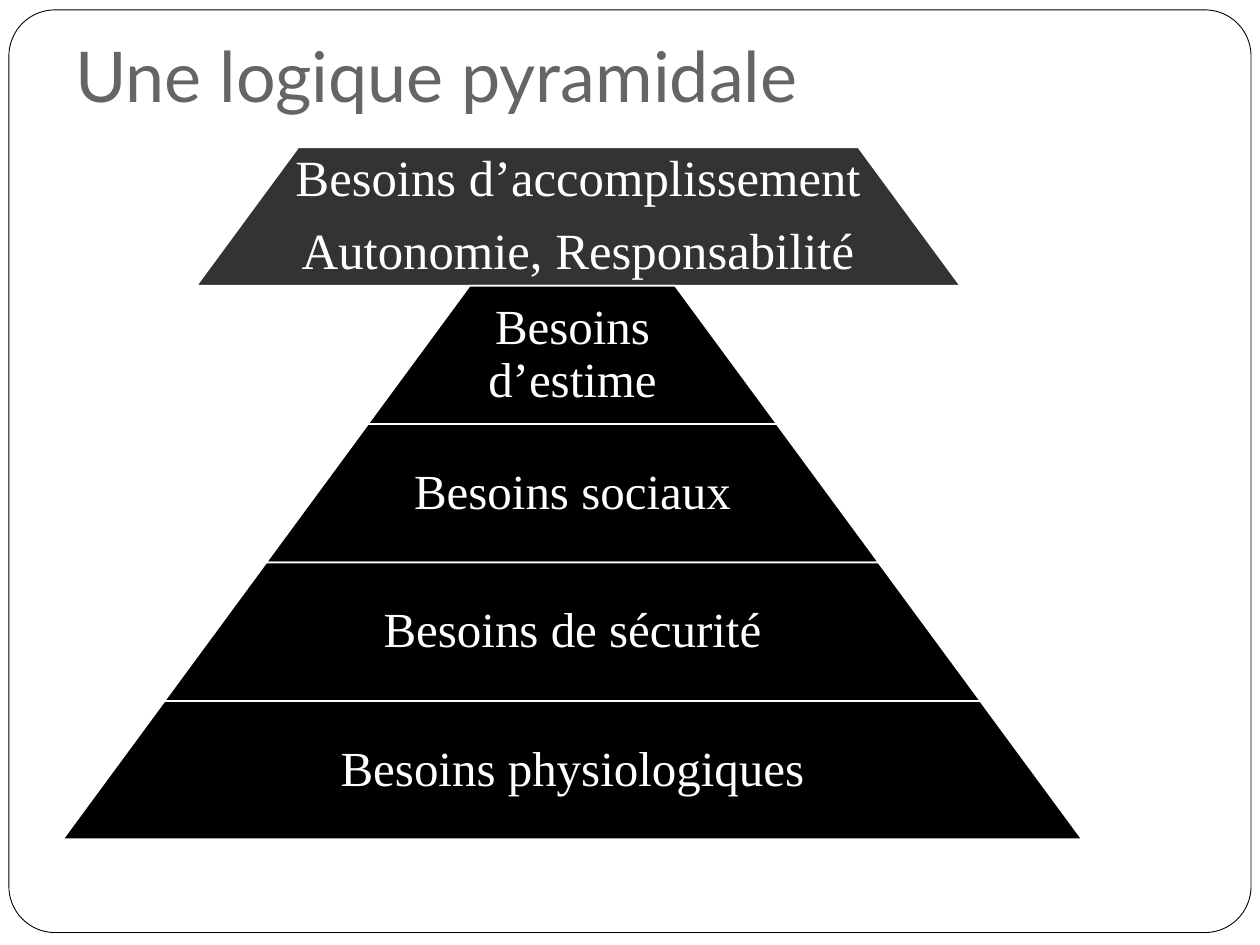
from pptx import Presentation
from pptx.dml.color import RGBColor
from pptx.enum.shapes import MSO_SHAPE as Preset
from pptx.enum.text import MSO_ANCHOR as Anchor, PP_ALIGN as Align
from pptx.util import Cm, Pt


def paint(shape, fill, line, width):
    shape.shadow.inherit = False
    shape.fill.solid()
    shape.fill.fore_color.rgb = RGBColor.from_string(fill)
    shape.line.color.rgb = RGBColor.from_string(line)
    shape.line.width = Pt(width)


def write(para, text, font, size, color):
    span = para.add_run()
    span.text = text
    span.font.name = font
    span.font.size = Pt(size)
    span.font.color.rgb = RGBColor.from_string(color)


deck = Presentation()
deck.slide_width, deck.slide_height = Cm(25.4), Cm(19.05)
page = deck.slides.add_slide(deck.slide_layouts[6])

frame = page.shapes.add_shape(Preset.ROUNDED_RECTANGLE, Cm(0.18), Cm(0.2), Cm(25.04), Cm(18.6))
frame.adjustments[0] = 0.05
paint(frame, "FFFFFF", "000000", 0.5)

title = page.shapes.add_textbox(Cm(1.27), Cm(0.43), Cm(22.86), Cm(2.16)).text_frame
title.word_wrap = True
title.vertical_anchor = Anchor.BOTTOM
title.margin_bottom = Cm(0.25)
write(title.paragraphs[0], "Une logique pyramidale", "Lato", 40, "696464")

top, height = 2.97, 2.79
tiers = [
    (["Besoins d’accomplissement", "Autonomie, Responsabilité"], 11.66, 15.4, 1, "353232", 29),
    (["Besoins d’estime"], 11.54, 8.25, 0.65, "000000", 28),
    (["Besoins sociaux"], 11.54, 12.35, 0.65, "000000", 28),
    (["Besoins de sécurité"], 11.54, 16.45, 0.65, "000000", 28),
    (["Besoins physiologiques"], 11.54, 20.55, 0.65, "000000", 28),
]
for row, (lines, center, width, share, fill, size) in enumerate(tiers):
    y = Cm(top + row * height)
    tier = page.shapes.add_shape(Preset.TRAPEZOID, Cm(center - width / 2), y, Cm(width), Cm(height))
    tier.adjustments[0] = 0.736
    paint(tier, fill, "FFFFFF", 1)

    text_width = width * share
    box = page.shapes.add_textbox(Cm(center - text_width / 2), y, Cm(text_width), Cm(height))
    label = box.text_frame
    label.word_wrap = True
    label.vertical_anchor = Anchor.MIDDLE
    label.margin_left = label.margin_right = label.margin_top = label.margin_bottom = Cm(0.1)
    for index, line in enumerate(lines):
        para = label.add_paragraph() if index else label.paragraphs[0]
        para.alignment = Align.CENTER
        para.line_spacing = 0.9
        para.space_after = Pt(10)
        write(para, line, "Times New Roman", size, "FFFFFF")

deck.save("out.pptx")
